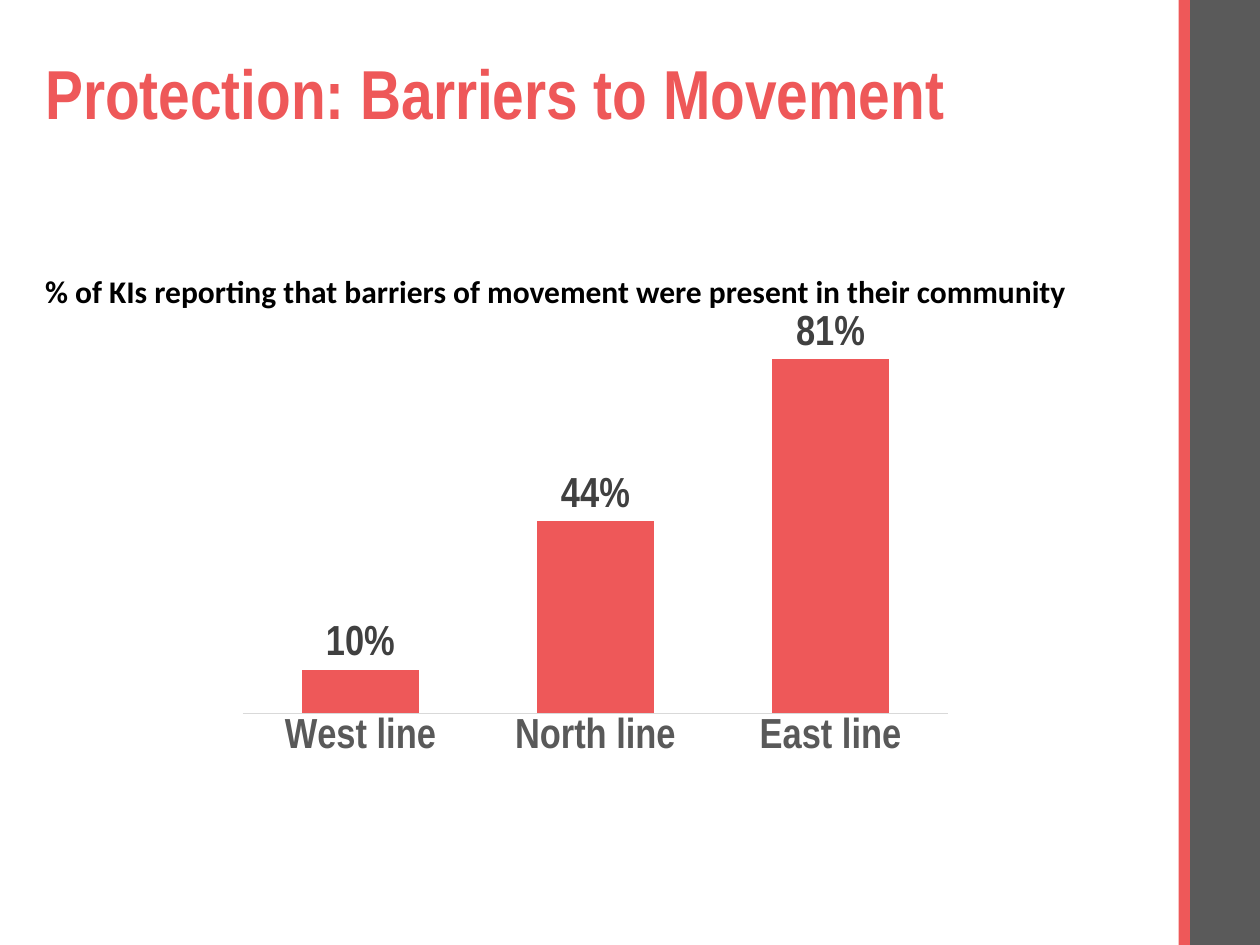
from lxml import etree
from pptx import Presentation
from pptx.chart.data import CategoryChartData
from pptx.dml.color import RGBColor
from pptx.enum.chart import XL_CHART_TYPE, XL_LABEL_POSITION, XL_TICK_MARK
from pptx.enum.shapes import MSO_SHAPE
from pptx.enum.text import MSO_ANCHOR, PP_ALIGN
from pptx.oxml.ns import qn
from pptx.util import Cm, Pt

COLUMNS = XL_CHART_TYPE.COLUMN_CLUSTERED
OUTSIDE = XL_LABEL_POSITION.OUTSIDE_END
NO_TICK = XL_TICK_MARK.NONE
RECTANGLE = MSO_SHAPE.RECTANGLE
MIDDLE, TOP = MSO_ANCHOR.MIDDLE, MSO_ANCHOR.TOP
LEFT = PP_ALIGN.LEFT

# Content
TITLE = "Protection: Barriers to Movement"
CAPTION = "% of KIs reporting that barriers of movement were present in their community"
BARRIERS = {"West line": 0.10, "North line": 0.44, "East line": 0.81}

# Look; lengths in centimetres
COLORS = {"red": "EE5859", "gray": "5A5A5A", "black": "000000",
          "axis": "595959", "label": "404040", "rule": "D9D9D9"}
NARROW = "Arial Narrow"
PAGE_WIDTH, PAGE_HEIGHT = 25.4, 19.05
SIDE_BARS = [("gray", 23.95, PAGE_WIDTH - 23.95), ("red", 23.76, 0.23)]
TITLE_AREA = (0.66, 1.02, 22.07, 1.88)
CAPTION_AREA = (0.66, 5.36, 22.71, 1.02)
CHART_AREA = (4.6, 6.27, 14.81, 9.22)
PLOT_LAYOUT = {"x": 0.02, "y": 0.02, "w": 0.96, "h": 0.86}


def rgb(name):
    return RGBColor.from_string(COLORS[name])


def style_font(font, name, size, color):
    for key, value in {"name": name, "size": Pt(size), "bold": True}.items():
        setattr(font, key, value)
    font.color.rgb = rgb(color)


def write(box, text, anchor, name, size, color):
    frame = box.text_frame
    frame.word_wrap = True
    frame.vertical_anchor = anchor
    para = frame.paragraphs[0]
    para.alignment = LEFT
    span = para.add_run()
    span.text = text
    style_font(span.font, name, size, color)
    return para


def fix_plot_area(chart, layout):
    plot_area = chart._chartSpace.chart.plotArea
    for old in plot_area.findall(qn("c:layout")):
        plot_area.remove(old)
    holder = etree.Element(qn("c:layout"))
    manual = etree.SubElement(holder, qn("c:manualLayout"))
    settings = {"layoutTarget": "inner", "xMode": "edge", "yMode": "edge", **layout}
    for tag, value in settings.items():
        etree.SubElement(manual, qn(f"c:{tag}")).set("val", str(value))
    plot_area.insert(0, holder)


def add_barrier_chart(page):
    data = CategoryChartData(number_format="0%")
    data.categories = list(BARRIERS)
    data.add_series("Series 1", list(BARRIERS.values()))
    chart = page.shapes.add_chart(COLUMNS, *map(Cm, CHART_AREA), data).chart
    chart.has_legend = chart.has_title = False
    style_font(chart.font, NARROW, 24, "black")

    # Axes
    values = chart.value_axis
    values.minimum_scale, values.maximum_scale = 0, 0.9
    values.has_major_gridlines = values.visible = False
    lines = chart.category_axis
    lines.major_tick_mark = lines.minor_tick_mark = NO_TICK
    lines.format.line.color.rgb = rgb("rule")
    lines.format.line.width = Pt(0.75)
    style_font(lines.tick_labels.font, NARROW, 24, "axis")

    # Columns and their labels
    plot = chart.plots[0]
    plot.gap_width, plot.overlap = 100, -27
    plot.vary_by_categories = False
    series = plot.series[0]
    series.format.fill.solid()
    series.format.fill.fore_color.rgb = rgb("red")
    labels = series.data_labels
    label_format = {"show_value": True, "number_format": "0%",
                    "number_format_is_linked": False, "position": OUTSIDE}
    for key, value in label_format.items():
        setattr(labels, key, value)
    style_font(labels.font, NARROW, 24, "label")
    fix_plot_area(chart, PLOT_LAYOUT)


def main():
    deck = Presentation()
    deck.slide_width, deck.slide_height = Cm(PAGE_WIDTH), Cm(PAGE_HEIGHT)
    page = deck.slides.add_slide(deck.slide_layouts[5])

    # Side bars
    for color, left, width in SIDE_BARS:
        bar = page.shapes.add_shape(RECTANGLE, Cm(left), 0, Cm(width), Cm(PAGE_HEIGHT))
        bar.shadow.inherit = False
        bar.fill.solid()
        bar.fill.fore_color.rgb = rgb(color)
        bar.line.fill.background()

    # Title and caption
    title = page.shapes.title
    title.left, title.top, title.width, title.height = map(Cm, TITLE_AREA)
    write(title, TITLE, MIDDLE, NARROW, 39.6, "red").line_spacing = 0.9
    caption = page.shapes.add_textbox(*map(Cm, CAPTION_AREA))
    write(caption, CAPTION, TOP, "Calibri", 18, "black")

    add_barrier_chart(page)
    deck.save("out.pptx")


if __name__ == "__main__":
    main()
